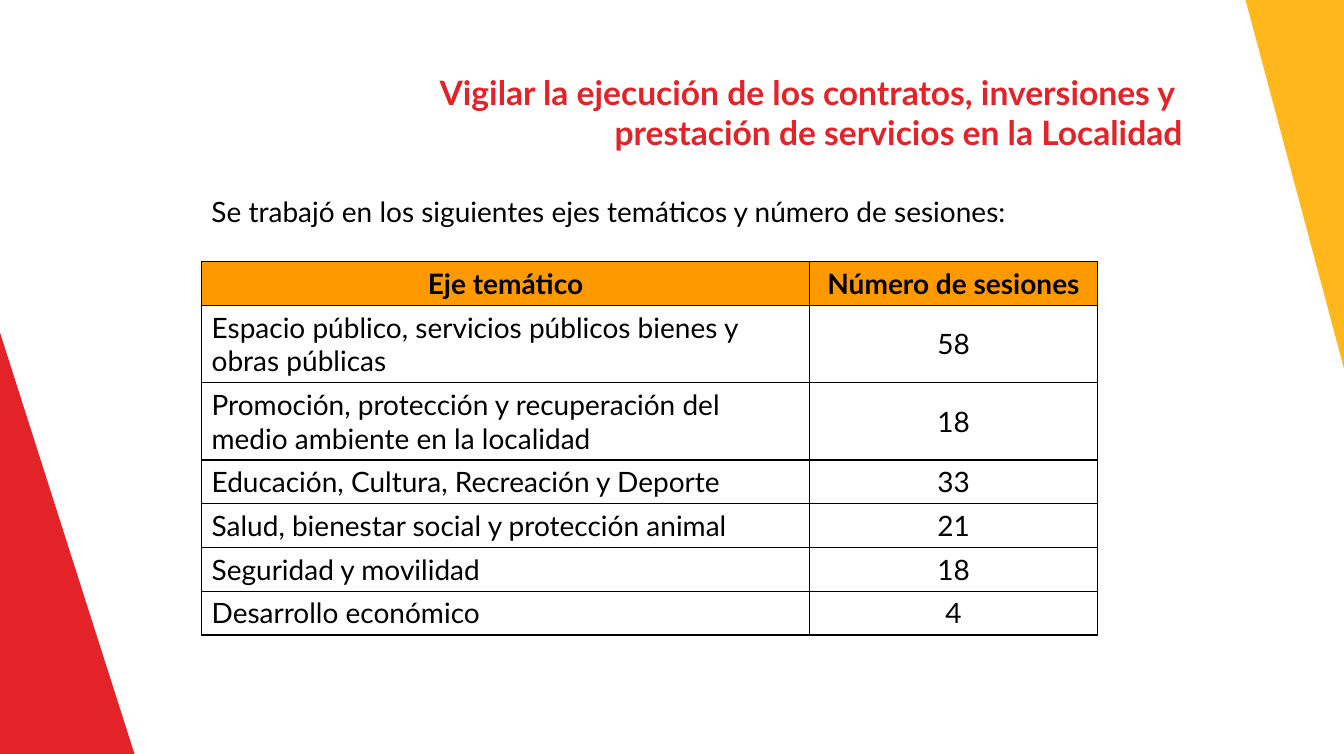
from lxml import etree
from pptx import Presentation
from pptx.dml.color import RGBColor
from pptx.enum.text import MSO_ANCHOR, PP_ALIGN
from pptx.oxml.ns import qn
from pptx.util import Cm, Pt

LEFT, CENTER, RIGHT = PP_ALIGN.LEFT, PP_ALIGN.CENTER, PP_ALIGN.RIGHT
MIDDLE = MSO_ANCHOR.MIDDLE

RED = RGBColor(0xE4, 0x23, 0x28)
YELLOW = RGBColor(0xFF, 0xB7, 0x1B)
ORANGE = RGBColor(0xFF, 0x99, 0x00)
BLACK = RGBColor(0x00, 0x00, 0x00)

FONT = "Lato"
WIDTH, HEIGHT = 33.87, 19
MARGIN = 5.08
COLS = (15.32, 7.26)
SHORT, TALL = 1.1, 1.95

TITLE = ("Vigilar la ejecución de los contratos, inversiones y \v"
         "prestación de servicios en la Localidad")
INTRO = "Se trabajó en los siguientes ejes temáticos y número de sesiones:"
HEADS = ("Eje temático", "Número de sesiones")
TOPICS = (
    ("Espacio público, servicios públicos bienes y obras públicas", 58, TALL),
    ("Promoción, protección y recuperación del medio ambiente en la localidad", 18, TALL),
    ("Educación, Cultura, Recreación y Deporte", 33, SHORT),
    ("Salud, bienestar social y protección animal", 21, SHORT),
    ("Seguridad y movilidad", 18, SHORT),
    ("Desarrollo económico", 4, SHORT),
)


def add_wedge(slide, points, color):
    start, *rest = [(Cm(x), Cm(y)) for x, y in points]
    builder = slide.shapes.build_freeform(*start)
    builder.add_line_segments(rest, close=True)
    wedge = builder.convert_to_shape()
    wedge.shadow.inherit = False
    wedge.fill.solid()
    wedge.fill.fore_color.rgb = color
    wedge.line.fill.background()


def set_text(frame, text, align, size=20, color=BLACK, bold=False):
    frame.text = text
    line = frame.paragraphs[0]
    line.alignment = align
    for run in line.runs:
        run.font.name = FONT
        run.font.size = Pt(size)
        run.font.bold = bold
        run.font.color.rgb = color


def add_text(slide, place, text, align, **style):
    frame = slide.shapes.add_textbox(*map(Cm, place)).text_frame
    frame.word_wrap = True
    set_text(frame, text, align, **style)


def add_borders(cell):
    props = cell._tc.get_or_add_tcPr()
    for side in ("a:lnL", "a:lnR", "a:lnT", "a:lnB"):
        edge = etree.SubElement(props, qn(side), w=str(Pt(1)))
        fill = etree.SubElement(edge, qn("a:solidFill"))
        etree.SubElement(fill, qn("a:srgbClr"), val=str(BLACK))


def fill_cell(cell, text, align, head=False):
    set_text(cell.text_frame, text, align, bold=head)
    add_borders(cell)
    if head:
        cell.fill.solid()
        cell.fill.fore_color.rgb = ORANGE
    else:
        cell.fill.background()


def add_topics(slide):
    heights = [SHORT] + [height for _, _, height in TOPICS]
    place = (MARGIN, 6.59, sum(COLS), sum(heights))
    table = slide.shapes.add_table(len(heights), len(COLS), *map(Cm, place)).table
    table.first_row = table.horz_banding = False
    for column, width in zip(table.columns, COLS):
        column.width = Cm(width)
    for row, height in zip(table.rows, heights):
        row.height = Cm(height)
    for index, head in enumerate(HEADS):
        fill_cell(table.cell(0, index), head, CENTER, head=True)
    for index, (topic, count, _) in enumerate(TOPICS, 1):
        fill_cell(table.cell(index, 0), topic, LEFT)
        number = table.cell(index, 1)
        fill_cell(number, str(count), CENTER)
        number.vertical_anchor = MIDDLE


def main():
    deck = Presentation()
    deck.slide_width, deck.slide_height = Cm(WIDTH), Cm(HEIGHT)
    slide = deck.slides.add_slide(deck.slide_layouts[6])
    add_wedge(slide, [(0, 8.38), (0, HEIGHT), (3.39, HEIGHT)], RED)
    add_wedge(slide, [(WIDTH, 0), (31.39, 0), (WIDTH, 9.29)], YELLOW)
    add_text(slide, (1.27, 1.68, 28.78, 2.31), TITLE, RIGHT, size=24, color=RED, bold=True)
    add_text(slide, (MARGIN, 4.77, 26.26, 1.1), INTRO, LEFT)
    add_topics(slide)
    deck.save("out.pptx")


if __name__ == "__main__":
    main()
